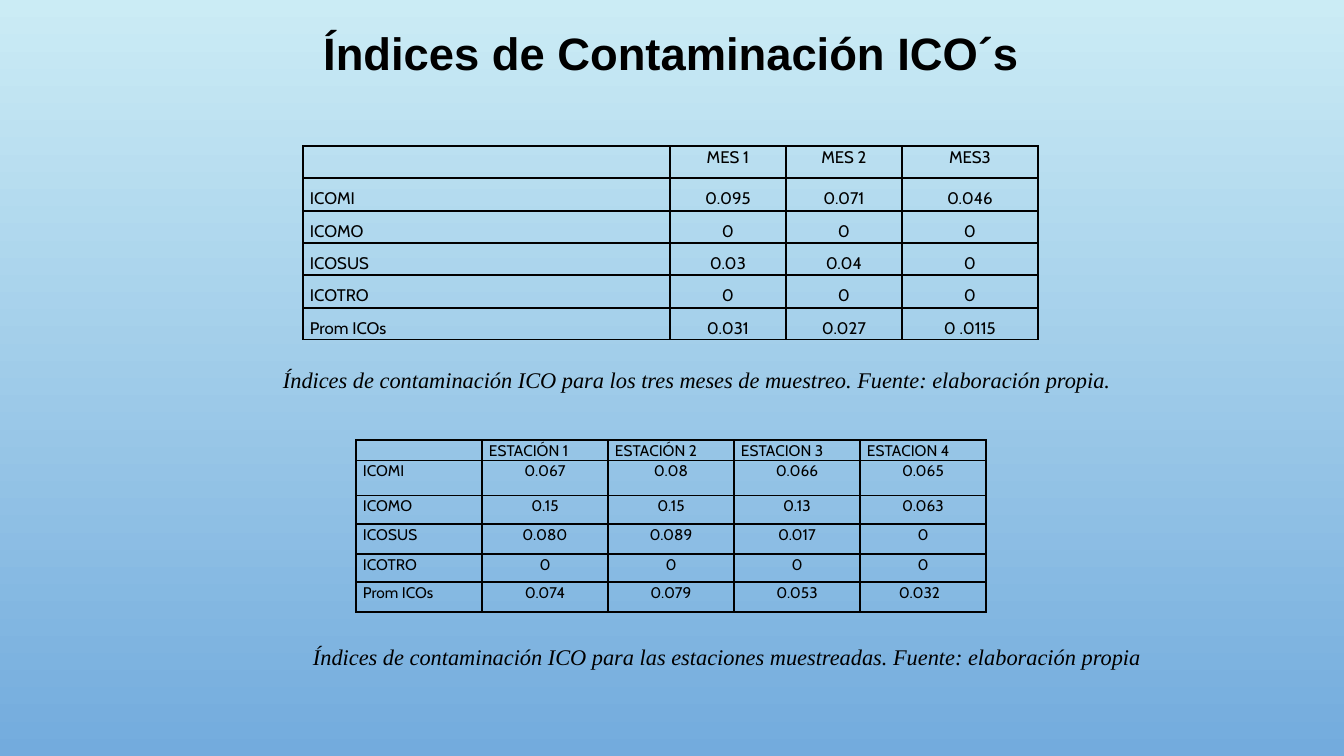
from lxml import etree
from pptx import Presentation, util as u
from pptx.dml.color import RGBColor
from pptx.enum import text
from pptx.oxml import ns

COLORS = {"sky": "CBECF5", "water": "73ABDD", "ink": "000000"}
SCALE = 914400 / 100.8
ALIGN = text.PP_ALIGN


def px(length):
    return u.Emu(round(length * SCALE))


def style(target, **values):
    for name, value in values.items():
        setattr(target, name, value)


ink = RGBColor.from_string(COLORS["ink"])

deck = Presentation()
style(deck, slide_width=px(1344), slide_height=px(756))
page = deck.slides.add_slide(deck.slide_layouts[5])

# Background
backdrop = page.background.fill
backdrop.gradient()
backdrop.gradient_angle = 270
for stop, shade in zip(backdrop.gradient_stops, ("sky", "water")):
    stop.color.rgb = RGBColor.from_string(COLORS[shade])

# Title, followed by a line break
title = page.shapes.title
style(title, left=px(100), top=px(39), width=px(1142), height=px(107))
style(title.text_frame, word_wrap=True, vertical_anchor=text.MSO_ANCHOR.MIDDLE)
para = title.text_frame.paragraphs[0]
style(para, alignment=ALIGN.CENTER, line_spacing=0.9)
span = para.add_run()
span.text = "Índices de Contaminación ICO´s"
style(span.font, name="Arial", size=u.Pt(32.4), bold=True)
span.font.color.rgb = ink
para.add_line_break()

# Tables of indices by month and by station
tables = [
    dict(at=(303, 146), cols=[367, 116, 116, 136], rows=[32, 33, 32, 32, 33, 32],
         size=12, spacing=1.5, head=ALIGN.CENTER, label=ALIGN.JUSTIFY,
         cells=[["", "MES 1", "MES 2", "MES3"],
                ["ICOMI", "0.095", "0.071", "0.046"],
                ["ICOMO", "0", "0", "0"],
                ["ICOSUS", "0.03", "0.04", "0"],
                ["ICOTRO", "0", "0", "0"],
                ["Prom ICOs", "0.031", "0.027", "0 .0115"]]),
    dict(at=(356, 440), cols=[126] * 5, rows=[20, 35, 29, 30, 28, 30],
         size=11, spacing=1.07, head=ALIGN.LEFT, label=ALIGN.LEFT,
         cells=[["", "ESTACIÓN 1", "ESTACIÓN 2", "ESTACION 3", "ESTACION 4"],
                ["ICOMI", "0.067", "0.08", "0.066", "0.065"],
                ["ICOMO", "0.15", "0.15", "0.13", "0.063"],
                ["ICOSUS", "0.080", "0.089", "0.017", "0"],
                ["ICOTRO", "0", "0", "0", "0"],
                ["Prom ICOs", "0.074", "0.079", "0.053", "0.032"]]),
]
for data in tables:
    cols, rows = data["cols"], data["rows"]
    left, top = data["at"]
    table = page.shapes.add_table(len(rows), len(cols), px(left), px(top),
                                  px(sum(cols)), px(sum(rows))).table
    style(table, first_row=False, horz_banding=False)
    for column, width in zip(table.columns, cols):
        column.width = px(width)
    for row, height in zip(table.rows, rows):
        row.height = px(height)
    for r, words in enumerate(data["cells"]):
        for c, word in enumerate(words):
            cell = table.cell(r, c)
            style(cell, margin_left=px(7), margin_right=px(7), margin_top=0, margin_bottom=0)
            if word == "0.032":
                cell.margin_right = px(14)
            para = cell.text_frame.paragraphs[0]
            para.line_spacing = data["spacing"] if r else 1.07
            para.alignment = data["head"] if r == 0 else ALIGN.CENTER if c else data["label"]
            if word:
                span = para.add_run()
                span.text = word
                style(span.font, name="Cabin", size=u.Pt(data["size"]))
                span.font.color.rgb = ink
            else:
                etree.SubElement(para._p, ns.qn("a:endParaRPr"), sz=str(data["size"] * 100))
            # Cell borders
            props = cell._tc.get_or_add_tcPr()
            for side in ("lnL", "lnR", "lnT", "lnB"):
                border = etree.SubElement(props, ns.qn(f"a:{side}"), w=str(u.Pt(1)))
                solid = etree.SubElement(border, ns.qn("a:solidFill"))
                etree.SubElement(solid, ns.qn("a:srgbClr"), val=COLORS["ink"])
            cell.fill.background()

# Captions
captions = [
    (273, 361, "Índices de contaminación ICO para los tres meses de muestreo. Fuente: elaboración propia."),
    (303, 638, "Índices de contaminación ICO para las estaciones muestreadas. Fuente: elaboración propia"),
]
for left, top, words in captions:
    box = page.shapes.add_textbox(px(left), px(top), px(860), px(37))
    box.text_frame.word_wrap = True
    span = box.text_frame.paragraphs[0].add_run()
    span.text = words
    style(span.font, name="Times New Roman", size=u.Pt(16), italic=True)
    span.font.color.rgb = ink

deck.save("out.pptx")
